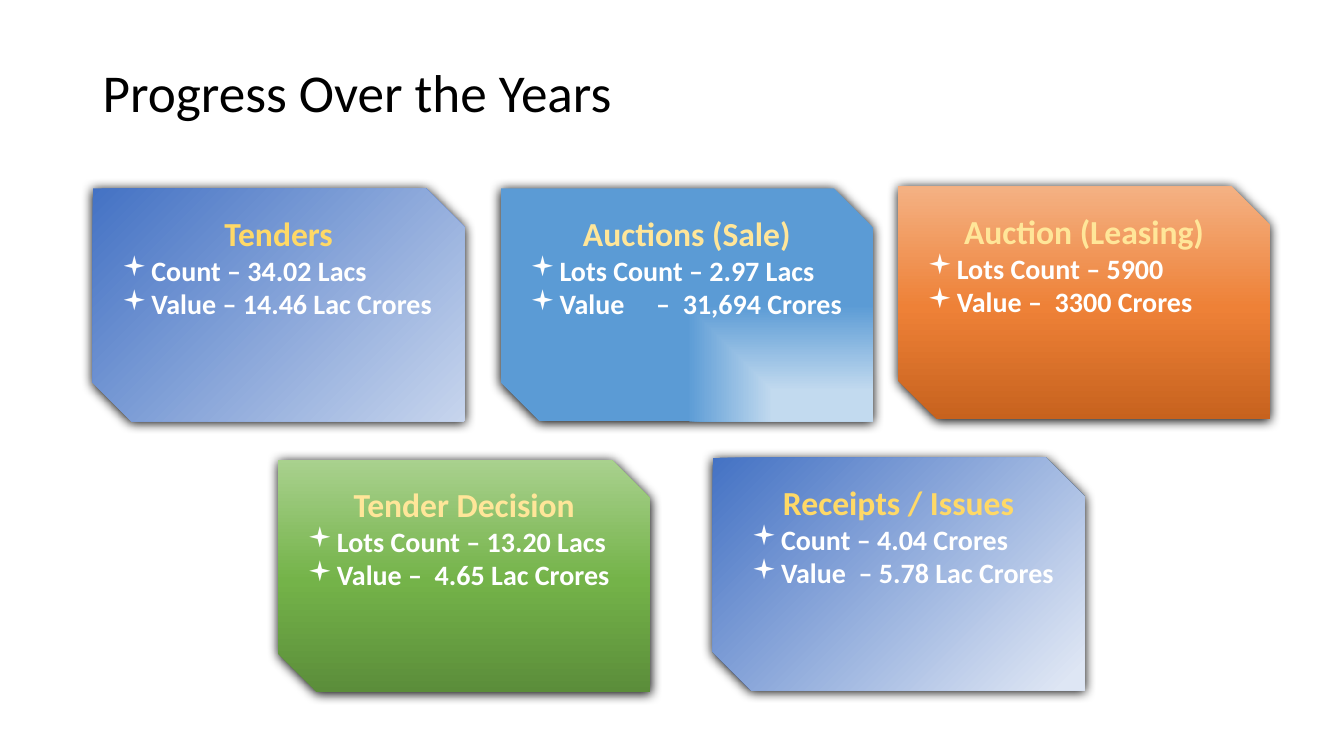
from lxml import etree
from pptx import Presentation
from pptx.dml.color import RGBColor
from pptx.enum import shapes, text
from pptx.oxml import ns
from pptx.util import Pt

CARD_W, CARD_H = 265.7, 166.3
CIRCLE, RECT, UPWARD = "circle", "rect", "upward"
CARDS = [
    ((66.2, 134.6), "Tenders", "FFD966", 4.5, 21,
     CIRCLE, [(0, "C7D5ED"), (100, "4472C4")],
     ["Count – 34.02 Lacs", "Value – 14.46 Lac Crores"]),
    ((357.8, 134.6), "Auctions (Sale)", "FFE699", 0, 21,
     RECT, [(26, "C2DAEF"), (100, "5B9BD5")],
     ["Lots Count – 2.97 Lacs", "Value\t–  31,694 Crores"]),
    ((641.5, 133.2), "Auction (Leasing)", "FFE699", 0, 21,
     UPWARD, [(0, "C7621E"), (48, "EE8137"), (100, "F4B183")],
     ["Lots Count – 5900", "Value –  3300 Crores"]),
    ((509, 326.9), "Receipts / Issues", "FFD966", 0, 28,
     CIRCLE, [(4, "DEE6F4"), (100, "4472C4")],
     ["Count – 4.04 Crores", "Value  – 5.78 Lac Crores"]),
    ((198.7, 328.3), "Tender Decision", "FFE699", 0, 21,
     UPWARD, [(0, "5B8D3A"), (48, "74B349"), (100, "A9D18E")],
     ["Lots Count – 13.20 Lacs", "Value –  4.65 Lac Crores"]),
]


def rgb(value):
    """Turn a hex string into a colour."""
    return RGBColor.from_string(value)


def add_xml(parent, tag, **attrs):
    """Append a DrawingML element and return it."""
    return etree.SubElement(parent, ns.qn(tag),
                            {k: str(v) for k, v in attrs.items()})


def add_run(p, words, size, color, bold=False):
    """Add one formatted run to a paragraph."""
    r = p.add_run()
    r.text = words
    r.font.name, r.font.size, r.font.bold = "Calibri", Pt(size), bold
    r.font.color.rgb = rgb(color)


def style_card(sp, kind, stops):
    """Give a card its gradient, no outline and a soft shadow."""
    sp.line.fill.background()
    sp.shadow.inherit = False
    pr = sp._element.spPr
    grad = etree.Element(ns.qn("a:gradFill"), rotWithShape="1")
    stop_list = add_xml(grad, "a:gsLst")
    for pos, color in stops:
        gs = add_xml(stop_list, "a:gs", pos=pos * 1000)
        add_xml(gs, "a:srgbClr", val=color)
    if kind == UPWARD:
        add_xml(grad, "a:lin", ang=270 * 60000, scaled=0)
    else:
        shade = add_xml(grad, "a:path", path=kind)
        add_xml(shade, "a:fillToRect", l=100000, t=100000)
    pr.find(ns.qn("a:ln")).addprevious(grad)
    shadow = add_xml(pr.find(ns.qn("a:effectLst")), "a:outerShdw",
                     blurRad=Pt(8.5), dist=Pt(1), dir=90 * 60000,
                     algn="ctr", rotWithShape=0)
    add_xml(shadow, "a:srgbClr", val="000000")


def add_bullet(tf, words, indent):
    """Add a square-bulleted line with a hanging indent."""
    p = tf.add_paragraph()
    p.alignment = text.PP_ALIGN.LEFT
    pr = p._p.get_or_add_pPr()
    pr.set("marL", str(Pt(indent)))
    pr.set("indent", str(-Pt(21)))
    add_xml(pr, "a:buFont", typeface="Wingdings")
    add_xml(pr, "a:buChar", char="▪")
    if "\t" in words:
        add_xml(add_xml(pr, "a:tabLst"), "a:tab", pos=Pt(90), algn="l")
    add_run(p, words, 20, "FFFFFF", True)


def add_card(s, box, heading, color, before, indent, kind, stops, lines):
    """Draw one card with its heading and bullets in the box."""
    x, y, w, h = box
    sp = s.shapes.add_shape(shapes.MSO_SHAPE.SNIP_2_DIAG_RECTANGLE,
                            Pt(x), Pt(y), Pt(w), Pt(h))
    style_card(sp, kind, stops)
    tf = sp.text_frame
    tf.word_wrap = True
    tf.vertical_anchor = text.MSO_ANCHOR.TOP
    p = tf.paragraphs[0]
    p.alignment = text.PP_ALIGN.CENTER
    p.space_before = Pt(before)
    add_run(p, heading, 24, color, True)
    for line in lines:
        add_bullet(tf, line, indent)


def add_title(s, box, words):
    """Place and format the slide title in the box."""
    sp = s.shapes.title
    sp.left, sp.top, sp.width, sp.height = map(Pt, box)
    tf = sp.text_frame
    tf.auto_size = text.MSO_AUTO_SIZE.NONE
    tf.vertical_anchor = text.MSO_ANCHOR.MIDDLE
    p = tf.paragraphs[0]
    p.alignment = text.PP_ALIGN.LEFT
    p.line_spacing = 0.9
    add_run(p, words, 38, "000000")


def main():
    """Build and save the slide."""
    prs = Presentation()
    prs.slide_width, prs.slide_height = Pt(960), Pt(540)
    s = prs.slides.add_slide(prs.slide_layouts[5])
    add_title(s, (66.2, 28.8, 828, 78.5), "Progress Over the Years")
    for (x, y), *content in CARDS:
        add_card(s, (x, y, CARD_W, CARD_H), *content)
    prs.save("out.pptx")


if __name__ == "__main__":
    main()
